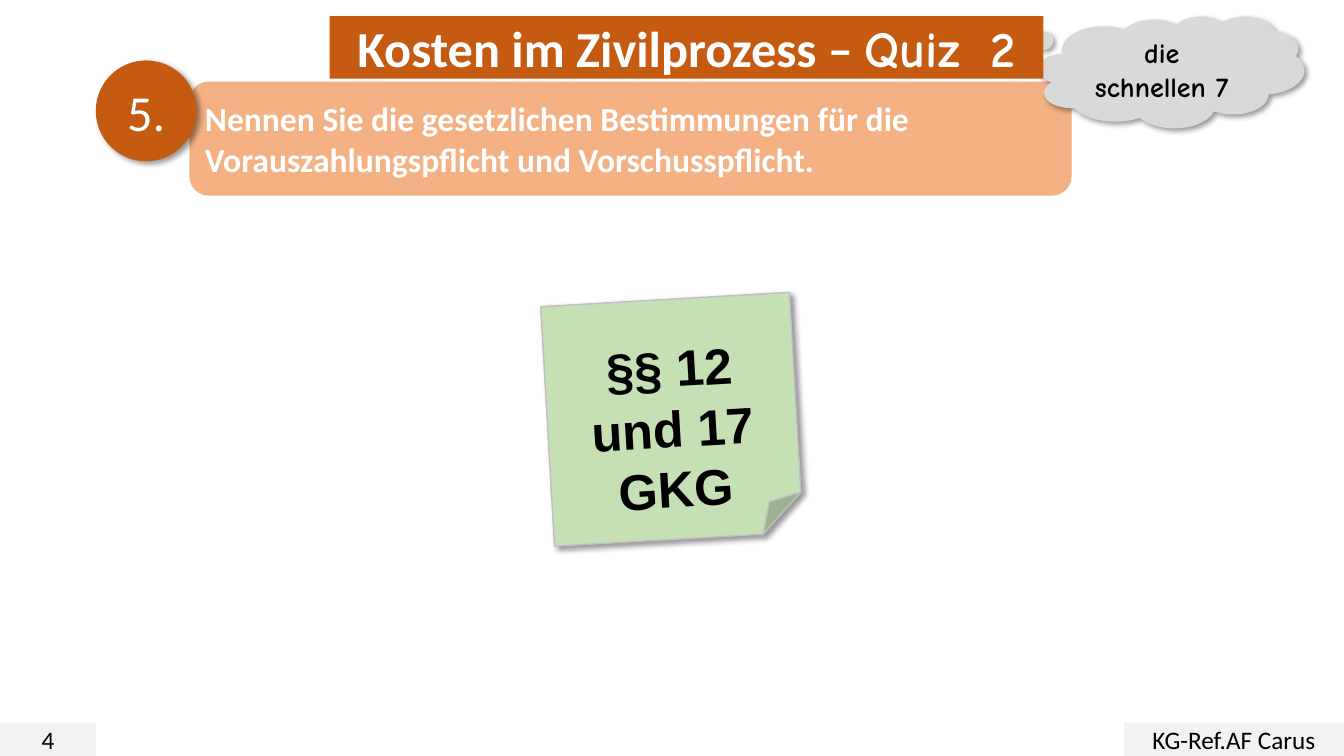
from lxml import etree
from pptx import Presentation
from pptx.dml.color import RGBColor
from pptx.enum.shapes import MSO_SHAPE
from pptx.enum.text import MSO_ANCHOR, MSO_AUTO_SIZE, PP_ALIGN
from pptx.oxml import parse_xml
from pptx.oxml.ns import nsdecls, qn
from pptx.util import Inches, Pt

RECT, ROUND = MSO_SHAPE.RECTANGLE, MSO_SHAPE.ROUNDED_RECTANGLE
OVAL, CLOUD, NOTE = MSO_SHAPE.OVAL, MSO_SHAPE.CLOUD_CALLOUT, MSO_SHAPE.FOLDED_CORNER
LEFT, CENTER = PP_ALIGN.LEFT, PP_ALIGN.CENTER
TOP, MIDDLE = MSO_ANCHOR.TOP, MSO_ANCHOR.MIDDLE
NO_FIT = MSO_AUTO_SIZE.NONE

WIDE, HIGH = Inches(13.333), Inches(7.5)
SANS, COMIC, ARIAL = "Calibri", "Comic Neue", "Arial"
COLORS = {
    "rust": "C55A11", "peach": "F4B183", "green": "C5E0B4", "cloud": "D9D9D9",
    "foot": "F2F2F2", "edge": "BFBFBF", "white": "FFFFFF", "black": "000000",
}


def color(name):
    return RGBColor.from_string(COLORS[name])


def place(left, top, width, height):
    """Turn percentages of the slide into lengths."""
    return (int(WIDE * left / 100), int(HIGH * top / 100),
            int(WIDE * width / 100), int(HIGH * height / 100))


def paint(shape, fill):
    shape.fill.solid()
    shape.fill.fore_color.rgb = color(fill)
    shape.line.fill.background()


def add_run(para, text, size, ink, font=SANS, bold=False):
    run = para.add_run()
    run.text = text
    run.font.size = Pt(size)
    run.font.name = font
    run.font.bold = bold
    run.font.color.rgb = color(ink)
    return run


def set_text(shape, align=CENTER, anchor=MIDDLE):
    """Prepare the text frame and return its paragraph."""
    frame = shape.text_frame
    frame.word_wrap = True
    frame.auto_size = NO_FIT
    frame.vertical_anchor = anchor
    para = frame.paragraphs[0]
    para.alignment = align
    return para


def add_box(shapes, kind, area, fill):
    shape = shapes.add_shape(kind, *place(*area))
    shape.shadow.inherit = False
    paint(shape, fill)
    return shape


def add_shadow(shape):
    effects = shape._element.spPr.find(qn("a:effectLst"))
    effects.append(parse_xml(
        f'<a:outerShdw {nsdecls("a")} blurRad="{Pt(4)}" dist="{Pt(3)}" '
        'dir="2700000" algn="tl" rotWithShape="0">'
        f'<a:srgbClr val="{COLORS["black"]}"><a:alpha val="40000"/></a:srgbClr>'
        '</a:outerShdw>'))


def add_foot(shapes, left, width, text):
    box = add_box(shapes, RECT, (left, 95.6, width, 4.4), "foot")
    add_run(set_text(box), text, 18, "black")


def add_task(shapes, number, text):
    group = shapes.add_group_shape().shapes
    bar = add_box(group, ROUND, (14.1, 10.8, 65.63, 15.07), "peach")
    add_run(set_text(bar, LEFT), text, 24, "white", bold=True)
    disc = add_box(group, OVAL, (7.13, 8, 7.5, 13.33), "rust")
    add_shadow(disc)
    add_run(set_text(disc), number, 36, "white")


def add_note(shapes, text):
    note = add_box(shapes, NOTE, (40.73, 39.6, 18.53, 31.73), "green")
    note.rotation = 356.7
    note.line.color.rgb = color("edge")
    note.line.width = Pt(1)
    add_shadow(note)
    para = set_text(note, anchor=TOP)
    note.text_frame.margin_top = Inches(0.37)
    note.text_frame.margin_bottom = 0
    add_run(para, text, 36, "black", ARIAL, True)


def add_cloud(shapes, text):
    cloud = add_box(shapes, CLOUD, (77.25, 2.13, 19.8, 14.8), "cloud")
    cloud.adjustments[0] = -0.592
    cloud.adjustments[1] = -0.348
    add_shadow(cloud)
    add_run(set_text(cloud), text, 20, "black", COMIC, True)


def set_title(title):
    title.left, title.top, title.width, title.height = place(24.53, 2.13, 53.1, 8.27)
    # Rounded outline for the placeholder
    geom = etree.SubElement(title._element.spPr, qn("a:prstGeom"), prst="roundRect")
    etree.SubElement(geom, qn("a:avLst"))
    paint(title, "rust")
    para = set_text(title)
    para.line_spacing = 1.0
    para.space_before = Pt(0)
    add_run(para, "Kosten im Zivilprozess – ", 36, "white", bold=True)
    add_run(para, "Quiz", 36, "white", COMIC, True)
    # Wide gap before the number
    gap = add_run(para, " ", 36, "white", COMIC, True)
    gap.font._element.set("spc", "900")
    add_run(para, "2", 36, "white", COMIC, True)


def main():
    deck = Presentation()
    deck.slide_width, deck.slide_height = WIDE, HIGH
    slide = deck.slides.add_slide(deck.slide_layouts[5])
    shapes = slide.shapes

    # Footer
    add_foot(shapes, 0, 7.13, "4")
    add_foot(shapes, 83.63, 16.37, "KG-Ref.AF Carus")

    # Question and answer
    add_task(shapes, "5.", "Nennen Sie die gesetzlichen Bestimmungen für die "
             "Vorauszahlungspflicht und Vorschusspflicht.")
    add_note(shapes, "§§ 12 und 17 GKG")
    add_cloud(shapes, "die schnellen 7")

    # Title, in front of the rest
    title = shapes.title
    set_title(title)
    shapes._spTree.append(title._element)

    deck.save("out.pptx")


if __name__ == "__main__":
    main()
